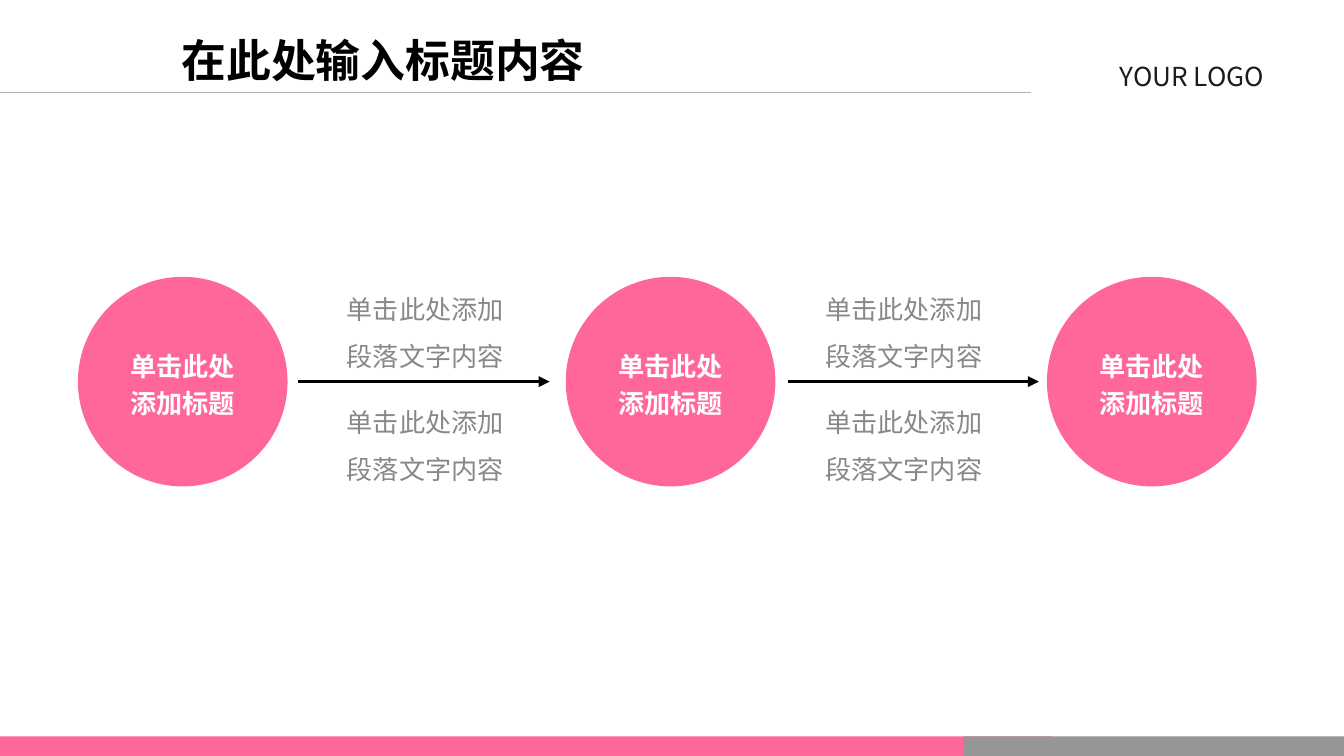
from lxml import etree
from pptx import Presentation
from pptx.dml.color import RGBColor
from pptx.enum.shapes import MSO_CONNECTOR, MSO_SHAPE
from pptx.enum.text import MSO_ANCHOR, MSO_AUTO_SIZE, PP_ALIGN
from pptx.oxml.ns import qn
from pptx.util import Inches, Pt

LINE = MSO_CONNECTOR.STRAIGHT
RECT, OVAL = MSO_SHAPE.RECTANGLE, MSO_SHAPE.OVAL
MIDDLE, CENTER, FIXED = MSO_ANCHOR.MIDDLE, PP_ALIGN.CENTER, MSO_AUTO_SIZE.NONE
FONT = "Noto Sans CJK SC"
PINK, GRAY, BLACK, WHITE = "FF6699", "969696", "000000", "FFFFFF"


def paint(target, color):
    """Give a fill a solid colour."""
    target.solid()
    target.fore_color.rgb = RGBColor.from_string(color)


def write(shape, text, size=14, color=BLACK, bold=False, font=FONT, space=1.0):
    """Write centred paragraphs, one for each line of text."""
    frame = shape.text_frame
    frame.word_wrap = True
    frame.auto_size = FIXED
    frame.vertical_anchor = MIDDLE
    frame.text = text
    for para in frame.paragraphs:
        para.alignment = CENTER
        para.line_spacing = space
        for run in para.runs:
            run.font.size = Pt(size)
            run.font.bold = bold
            run.font.name = font
            paint(run.font.fill, color)
            props = run.font._element
            etree.SubElement(props, qn("a:ea"), typeface=FONT)


def add_text(slide, box, text, **style):
    """Add a text box."""
    write(slide.shapes.add_textbox(*map(Inches, box)), text, **style)


def add_shape(slide, kind, box, color):
    """Add a flat shape without an outline."""
    shape = slide.shapes.add_shape(kind, *map(Inches, box))
    shape.shadow.inherit = False
    paint(shape.fill, color)
    shape.line.fill.background()
    return shape


def add_line(slide, left, right, y, color, width, arrow=False):
    """Add a level line, with an arrowhead if asked."""
    line = slide.shapes.add_connector(LINE, *map(Inches, (left, y, right, y)))
    paint(line.line.fill, color)
    line.line.width = Pt(width)
    if arrow:
        etree.SubElement(line.line._get_or_add_ln(), qn("a:tailEnd"), type="triangle")
    etree.SubElement(line._element.spPr, qn("a:effectLst"))


def add_title(slide, box, text):
    """Place and fill the title."""
    title = slide.shapes.title
    title.left, title.top, title.width, title.height = map(Inches, box)
    write(title, text, size=24, bold=True, font="Times New Roman")


def add_frame(slide):
    """Add the header rule, the logo label and the footer bars."""
    add_line(slide, 0, 7.67, 0.69, "B2B2B2", 0.75)
    add_text(slide, (7.83, 0.4, 2.08, 0.33), "YOUR LOGO", color="1C1C1C")
    add_shape(slide, RECT, (0, 5.48, 7.83, 0.15), PINK)
    add_shape(slide, RECT, (7.17, 5.48, 2.83, 0.15), GRAY)


def add_step(slide, left):
    """Add one titled circle."""
    disc = add_shape(slide, OVAL, (left, 2.06, 1.56, 1.56), PINK)
    write(disc, "单击此处添加标题", color=WHITE, bold=True, space=1.2)


def add_link(slide, start, left):
    """Add an arrow with notes above and below it."""
    for top in (2, 2.84):
        add_text(slide, (left, top, 2.41, 0.84), "单击此处添加\n段落文字内容",
                 color="888888", space=1.5)
    add_line(slide, start, start + 1.87, 2.84, BLACK, 1.5, arrow=True)


def main():
    """Build the slide."""
    deck = Presentation()
    deck.slide_width = Inches(10)
    deck.slide_height = deck.slide_width * 9 // 16
    slide = deck.slides.add_slide(deck.slide_layouts[5])
    paint(slide.background.fill, WHITE)
    add_frame(slide)
    add_title(slide, (0.92, 0.19, 3.86, 0.5), "在此处输入标题内容")
    for start, left in ((2.22, 1.96), (5.86, 5.52)):
        add_link(slide, start, left)
    for left in (0.58, 4.21, 7.79):
        add_step(slide, left)
    deck.save("out.pptx")


if __name__ == "__main__":
    main()
